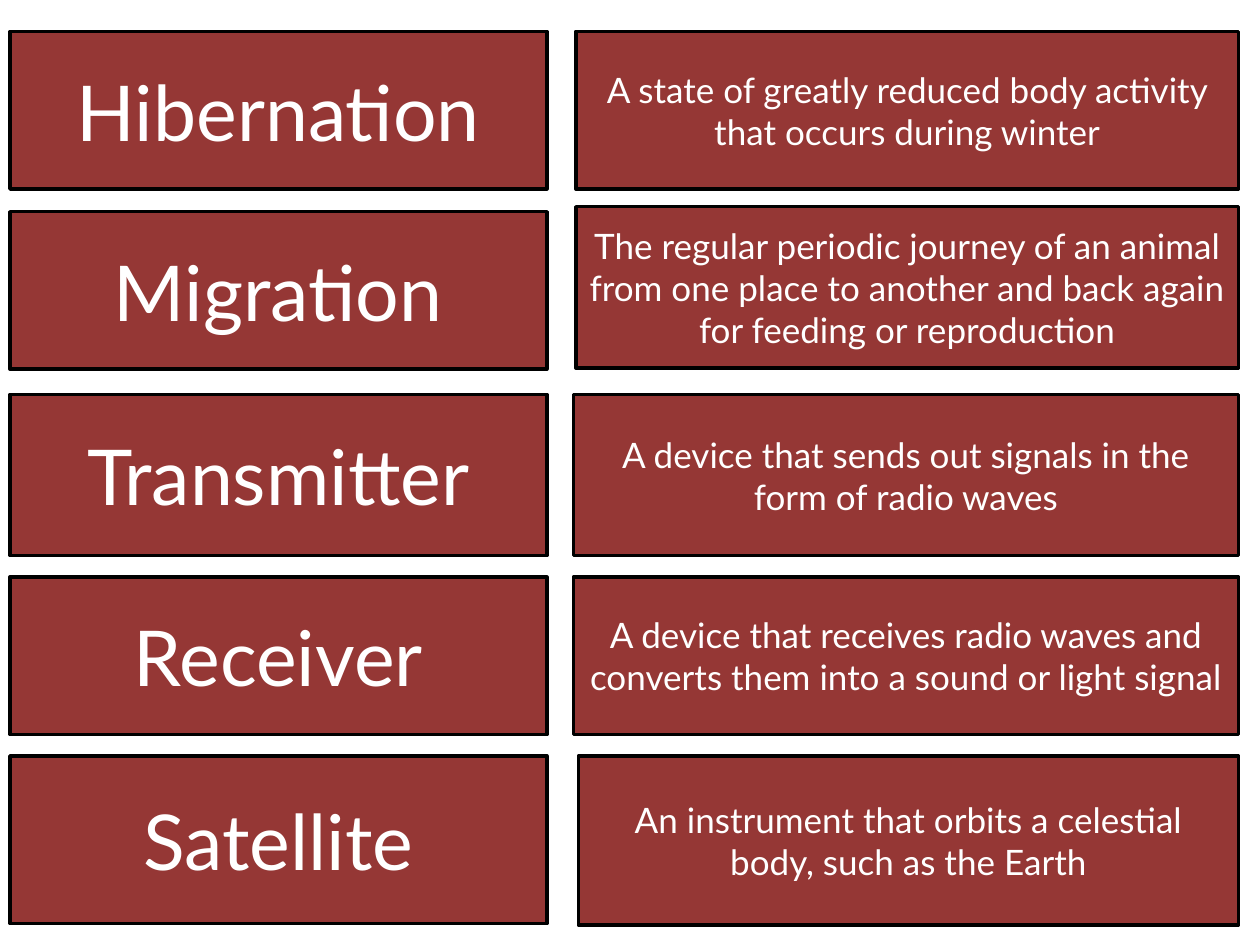
from pptx import Presentation
from pptx.dml.color import RGBColor
from pptx.enum import shapes, text
from pptx.util import Inches, Pt

RED = RGBColor(0x95, 0x37, 0x35)
BLACK = RGBColor(0, 0, 0)
WHITE = RGBColor(255, 255, 255)
FONT = "Lato"

TERM_LEFT, TERM_WIDTH = 0.08, 4.26
DEFINITION_RIGHT = 9.83

# term, (top, height), definition, (left, top, height)
GLOSSARY = [
    ("Hibernation", (0.25, 1.25),
     "A state of greatly reduced body activity that occurs during winter",
     (4.57, 0.25, 1.25)),
    ("Migration", (1.68, 1.25),
     "The regular periodic journey of an animal from one place to another "
     "and back again for feeding or reproduction",
     (4.57, 1.64, 1.28)),
    ("Transmitter", (3.13, 1.28),
     "A device that sends out signals in the form of radio waves",
     (4.55, 3.13, 1.28)),
    ("Receiver", (4.58, 1.25),
     "A device that receives radio waves and converts them into a sound "
     "or light signal",
     (4.55, 4.58, 1.25)),
    ("Satellite", (6, 1.33),
     "An instrument that orbits a celestial body, such as the Earth",
     (4.59, 6, 1.34)),
]


def write_text(shape, wording, *, size, color=WHITE, font=FONT):
    frame = shape.text_frame
    frame.word_wrap = True
    frame.vertical_anchor = text.MSO_ANCHOR.MIDDLE
    paragraph = frame.paragraphs[0]
    paragraph.alignment = text.PP_ALIGN.CENTER
    run = paragraph.add_run()
    run.text = wording
    run.font.size = Pt(size)
    run.font.name = font
    run.font.color.rgb = color


def add_card(slide, wording, left, top, width, height, *, size):
    card = slide.shapes.add_shape(
        shapes.MSO_SHAPE.FLOWCHART_PROCESS,
        Inches(left), Inches(top), Inches(width), Inches(height))
    card.shadow.inherit = False
    card.fill.solid()
    card.fill.fore_color.rgb = RED
    card.line.color.rgb = BLACK
    card.line.width = Pt(2)
    write_text(card, wording, size=size)


def main():
    presentation = Presentation()
    presentation.slide_width = Inches(10)
    presentation.slide_height = Inches(7.5)
    slide = presentation.slides.add_slide(presentation.slide_layouts[6])

    for term, (term_top, term_height), definition, (left, top, height) in GLOSSARY:
        add_card(slide, term, TERM_LEFT, term_top, TERM_WIDTH, term_height, size=44)
        add_card(slide, definition, left, top, DEFINITION_RIGHT - left, height, size=20)

    presentation.save("out.pptx")


if __name__ == "__main__":
    main()
